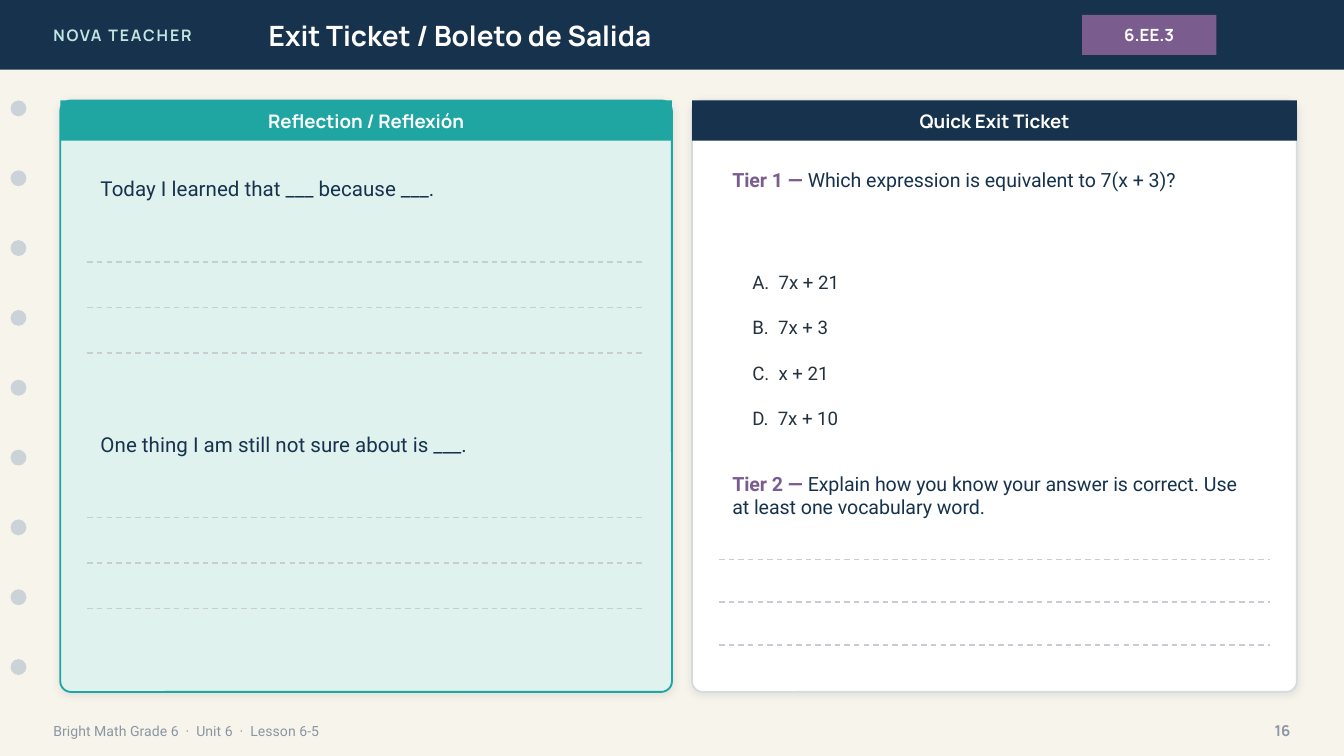
from lxml.etree import SubElement
from pptx import Presentation
from pptx.dml.color import RGBColor
from pptx.enum.dml import MSO_LINE
from pptx.enum.shapes import MSO_CONNECTOR, MSO_SHAPE
from pptx.enum.text import MSO_ANCHOR, PP_ALIGN
from pptx.oxml.ns import qn
from pptx.util import Cm, Pt

HUES = {
    "cream": "F7F4EC", "navy": "17324D", "mint": "BFE6E2", "white": "FFFFFF",
    "plum": "7A5C8E", "dot": "CBD3D9", "gray": "8A96A3", "pale": "DFF2EE",
    "teal": "1FA6A2", "rule": "C7CDD2", "edge": "D6DBDF", "ink": "24323F",
    "shade": "1C2E42",
}
HEAD, BODY = "Manrope", "Roboto"


def hue(name):
    return RGBColor.from_string(HUES[name])


def write(par, text, size=10, font=BODY, color="navy", bold=False, track=0):
    run = par.add_run()
    run.text = text
    run.font.size = Pt(size)
    run.font.name = font
    run.font.bold = bold
    run.font.color.rgb = hue(color)
    if track:
        run.font._element.set("spc", str(track))


class Page:
    def __init__(self, slide):
        self.slide = slide
        self.items = slide.shapes
        fill = slide.background.fill
        fill.solid()
        fill.fore_color.rgb = hue("cream")

    def shape(self, kind, left, top, width, height, fill, line=None):
        item = self.items.add_shape(kind, Cm(left), Cm(top), Cm(width), Cm(height))
        item.shadow.inherit = False
        item.fill.solid()
        item.fill.fore_color.rgb = hue(fill)
        if line:
            item.line.color.rgb = hue(line)
            item.line.width = Pt(1)
        else:
            item.line.fill.background()
        return item

    def bar(self, left, top, width, height, fill, text=None, size=10):
        item = self.shape(MSO_SHAPE.RECTANGLE, left, top, width, height, fill)
        if text:
            frame = item.text_frame
            frame.vertical_anchor = MSO_ANCHOR.MIDDLE
            par = frame.paragraphs[0]
            par.alignment = PP_ALIGN.CENTER
            write(par, text, size=size, font=HEAD, color="white", bold=True)

    def label(self, left, top, width, height, *runs,
              align=PP_ALIGN.LEFT, anchor=MSO_ANCHOR.MIDDLE):
        frame = self.items.add_textbox(
            Cm(left), Cm(top), Cm(width), Cm(height)).text_frame
        frame.word_wrap = True
        frame.vertical_anchor = anchor
        par = frame.paragraphs[0]
        par.alignment = align
        for text, style in runs:
            write(par, text, **style)

    def card(self, left, width, fill, line, color, title):
        item = self.shape(MSO_SHAPE.ROUNDED_RECTANGLE, left, 1.9, width, 11.18,
                          fill, line)
        item.adjustments[0] = 0.018
        glow = SubElement(item._element.spPr.find(qn("a:effectLst")),
                          qn("a:outerShdw"), blurRad=str(Pt(4)), dist=str(Pt(1)),
                          dir="5400000", algn="ctr", rotWithShape="0")
        tint = SubElement(glow, qn("a:srgbClr"), val=HUES["shade"])
        SubElement(tint, qn("a:alpha"), val="10000")
        self.bar(left, 1.9, width, 0.76, color, title)

    def rules(self, left, right, top, step):
        for row in range(3):
            y = Cm(top + row * step)
            item = self.items.add_connector(
                MSO_CONNECTOR.STRAIGHT, Cm(left), y, Cm(right), y)
            item.line.color.rgb = hue("rule")
            item.line.width = Pt(0.75)
            item.line.dash_style = MSO_LINE.DASH
            SubElement(item._element.spPr, qn("a:effectLst"))

    def tier(self, top, height, name, text):
        self.label(13.59, top, 10.41, height,
                   (name, dict(size=10.5, color="plum", bold=True)),
                   (text, dict(size=10.5)), anchor=MSO_ANCHOR.TOP)


def main():
    deck = Presentation()
    deck.slide_width, deck.slide_height = Cm(25.4), Cm(14.29)
    page = Page(deck.slides.add_slide(deck.slide_layouts[6]))

    page.bar(0, 0, 25.4, 1.32, "navy")
    page.label(0.76, 0, 6.1, 1.32, ("NOVA TEACHER", dict(
        size=8.5, font=HEAD, color="mint", bold=True, track=100)))
    page.label(4.83, 0, 14.22, 1.32, ("Exit Ticket / Boleto de Salida", dict(
        size=15, font=HEAD, color="white", bold=True)))
    page.bar(20.45, 0.28, 2.54, 0.76, "plum", "6.EE.3", size=9)

    for row in range(9):
        page.shape(MSO_SHAPE.OVAL, 0.2, 1.9 + row * 1.32, 0.3, 0.3, "dot")

    page.label(0.76, 13.46, 17.78, 0.71, (
        "Bright Math Grade 6  ·  Unit 6  ·  Lesson 6-5",
        dict(size=7.5, color="gray")))
    page.label(23.37, 13.46, 1.27, 0.71, ("16", dict(
        size=8, font=HEAD, color="gray", bold=True)), align=PP_ALIGN.RIGHT)

    page.card(1.14, 11.56, "pale", "teal", "teal", "Reflection / Reflexión")
    stems = ("Today I learned that ___ because ___.",
             "One thing I am still not sure about is ___.")
    for row, stem in enumerate(stems):
        top = 3.05 + row * 4.83
        page.label(1.65, top, 10.54, 1.02, (stem, dict(size=11)))
        page.rules(1.65, 12.19, top + 1.9, 0.86)

    page.card(13.08, 11.43, "white", "edge", "navy", "Quick Exit Ticket")
    page.tier(3.05, 1.78, "Tier 1 — ", "Which expression is equivalent to 7(x + 3)?")
    picks = ("A.  7x + 21", "B.  7x + 3", "C.  x + 21", "D.  7x + 10")
    for row, pick in enumerate(picks):
        page.label(13.97, 4.95 + row * 0.86, 9.91, 0.76, (pick, dict(color="ink")))
    page.tier(8.79, 1.4, "Tier 2 — ",
              "Explain how you know your answer is correct. "
              "Use at least one vocabulary word.")
    page.rules(13.59, 24, 10.57, 0.81)

    deck.save("out.pptx")


if __name__ == "__main__":
    main()
